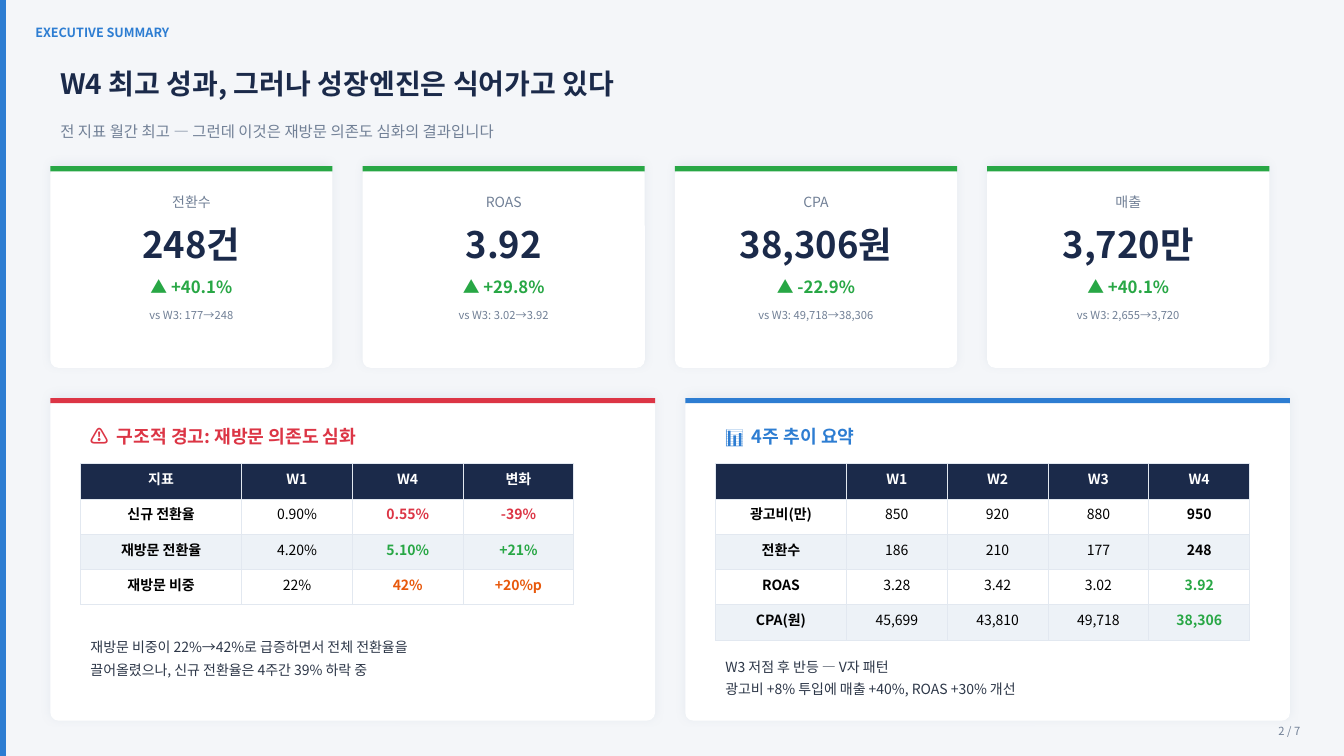
from lxml.etree import SubElement
from pptx import Presentation
from pptx.dml.color import RGBColor
from pptx.enum.shapes import MSO_SHAPE
from pptx.enum.text import MSO_ANCHOR, PP_ALIGN
from pptx.oxml.ns import qn
from pptx.util import Cm, Pt

FONT = "Noto Sans CJK KR"
NAVY, BLUE, GREEN, RED, ORANGE = "1B2A4A", "2D7DD2", "28A745", "DC3545", "E8590C"
GRAY, INK, BLACK, WHITE = "718096", "2D3748", "000000", "FFFFFF"
STRIPE, BORDER, SHADOW, BACKGROUND = "EDF2F7", "E2E8F0", "CBD5E0", "F4F6F9"


def color(hex_string):
    return RGBColor.from_string(hex_string)


def add_run(paragraph, text, size, hex_color, bold=False, spacing=None):
    run = paragraph.add_run()
    run.text = text
    run.font.name = FONT
    run.font.size = Pt(size)
    run.font.bold = bold
    run.font.color.rgb = color(hex_color)
    properties = run.font._element
    SubElement(properties, qn("a:ea"), typeface=FONT)
    if spacing:
        properties.set("spc", str(spacing))


def add_text(slide, box, lines, size, hex_color, bold=False,
             align=PP_ALIGN.LEFT, line_spacing=None, icon=None):
    frame = slide.shapes.add_textbox(*map(Cm, box)).text_frame
    frame.word_wrap = True
    frame.vertical_anchor = MSO_ANCHOR.MIDDLE
    for index, line in enumerate(lines):
        paragraph = frame.add_paragraph() if index else frame.paragraphs[0]
        paragraph.alignment = align
        if line_spacing:
            paragraph.line_spacing = line_spacing
        if icon:
            add_run(paragraph, icon + " ", size, hex_color, bold, spacing=150)
        add_run(paragraph, line, size, hex_color, bold)


def add_block(slide, kind, box, fill):
    shape = slide.shapes.add_shape(kind, *map(Cm, box))
    shape.fill.solid()
    shape.fill.fore_color.rgb = color(fill)
    shape.line.fill.background()
    shape.shadow.inherit = False
    return shape


def add_card(slide, box, accent, rounding):
    """White rounded card with a soft shadow and a coloured top bar."""
    left, top, width, height = box
    card = add_block(slide, MSO_SHAPE.ROUNDED_RECTANGLE, box, WHITE)
    card.adjustments[0] = rounding
    effects = card._element.spPr.find(qn("a:effectLst"))
    shadow = SubElement(effects, qn("a:outerShdw"), blurRad=str(Pt(6)),
                        dist=str(Pt(2)), dir="16200000", rotWithShape="0")
    shade = SubElement(shadow, qn("a:srgbClr"), val=SHADOW)
    SubElement(shade, qn("a:alpha"), val="35000")
    add_block(slide, MSO_SHAPE.RECTANGLE, (left, top, width, 0.13), accent)


def add_kpi(slide, box, label, value, change, comparison):
    left, top, width, height = box
    add_card(slide, box, GREEN, 0.04)
    # Offset from card top, height, text, size, colour, bold
    rows = [
        (0.51, 0.76, label, 10, GRAY, False),
        (1.27, 1.4, value, 26, NAVY, True),
        (2.67, 0.76, "▲ " + change, 12, GREEN, True),
        (3.43, 0.64, "vs W3: " + comparison, 8, GRAY, False),
    ]
    for offset, row_height, text, size, hex_color, bold in rows:
        add_text(slide, (left, top + offset, width, row_height), [text],
                 size, hex_color, bold, PP_ALIGN.CENTER)


def style_cell(cell, text, hex_color, bold, fill):
    if fill:
        cell.fill.solid()
        cell.fill.fore_color.rgb = color(fill)
    else:
        cell.fill.background()
    paragraph = cell.text_frame.paragraphs[0]
    paragraph.alignment = PP_ALIGN.CENTER
    if text:
        add_run(paragraph, text, 10, hex_color, bold)
    else:
        SubElement(paragraph._p, qn("a:endParaRPr"), sz="1000")
    # Borders come before the fill in the cell properties
    properties = cell._tc.get_or_add_tcPr()
    for index, side in enumerate(("lnL", "lnR", "lnT", "lnB")):
        line = SubElement(properties, qn("a:" + side), w=str(Pt(0.5)))
        solid = SubElement(line, qn("a:solidFill"))
        SubElement(solid, qn("a:srgbClr"), val=BORDER)
        properties.insert(index, line)


def add_data_table(slide, left, top, widths, rows, accents, accent_start):
    """Columns from accent_start on are bold, in the accent of their row."""
    table = slide.shapes.add_table(len(rows), len(widths), Cm(left), Cm(top),
                                   Cm(13.72), Cm(2.54)).table
    for column, width in zip(table.columns, widths):
        column.width = Cm(width)
    for row_index, row in enumerate(rows):
        table.rows[row_index].height = Cm(0.89)
        for column_index, text in enumerate(row):
            cell = table.cell(row_index, column_index)
            accented = column_index >= accent_start
            if row_index == 0:
                style_cell(cell, text, WHITE, True, NAVY)
            else:
                style_cell(cell, text,
                           accents[row_index - 1] if accented else BLACK,
                           accented or column_index == 0,
                           STRIPE if row_index % 2 == 0 else None)


def add_panel(slide, box, accent, icon, heading, table, note, note_box, spacing):
    left, top, width, height = box
    inner = left + 0.76
    add_card(slide, box, accent, 0.025)
    add_text(slide, (inner, top + 0.51, 13.97, 0.89), [heading], 13, accent,
             True, icon=icon)
    add_data_table(slide, inner, top + 1.65, *table)
    note_offset, note_height = note_box
    add_text(slide, (inner, top + note_offset, 13.72, note_height), note,
             10, INK, line_spacing=spacing)


def add_header(slide, box):
    left, top, width, height = box
    add_block(slide, MSO_SHAPE.RECTANGLE, (left, top, 0.15, height), BLUE)
    add_text(slide, (left + 0.64, top + 0.46, 7.62, 0.71),
             ["EXECUTIVE SUMMARY"], 9, BLUE, True)
    add_text(slide, (left + 1.27, top + 1.4, 31.24, 1.4),
             ["W4 최고 성과, 그러나 성장엔진은 식어가고 있다"], 20, NAVY, True)
    add_text(slide, (left + width - 3.9, top + height - 1.02, 3.05, 0.76),
             ["2 / 7"], 8, GRAY, align=PP_ALIGN.RIGHT)
    add_text(slide, (left + 1.27, top + 2.92, 30.48, 0.76),
             ["전 지표 월간 최고 — 그런데 이것은 재방문 의존도 심화의 결과입니다"], 11, GRAY)


def main():
    presentation = Presentation()
    presentation.slide_width, presentation.slide_height = Cm(33.87), Cm(19.05)
    slide = presentation.slides.add_slide(presentation.slide_layouts[6])
    slide.background.fill.solid()
    slide.background.fill.fore_color.rgb = color(BACKGROUND)
    add_header(slide, (0, 0, 33.87, 19.05))

    # Key figures
    kpis = [
        ("전환수", "248건", "+40.1%", "177→248"),
        ("ROAS", "3.92", "+29.8%", "3.02→3.92"),
        ("CPA", "38,306원", "-22.9%", "49,718→38,306"),
        ("매출", "3,720만", "+40.1%", "2,655→3,720"),
    ]
    for index, kpi in enumerate(kpis):
        add_kpi(slide, (1.27 + index * 7.87, 4.19, 7.11, 5.08), *kpi)

    # Warning panel
    warning_rows = [
        ("지표", "W1", "W4", "변화"),
        ("신규 전환율", "0.90%", "0.55%", "-39%"),
        ("재방문 전환율", "4.20%", "5.10%", "+21%"),
        ("재방문 비중", "22%", "42%", "+20%p"),
    ]
    add_panel(slide, (1.27, 10.03, 15.24, 8.13), RED, "⚠",
              "구조적 경고: 재방문 의존도 심화",
              ([4.06] + [2.79] * 3, warning_rows, [RED, GREEN, ORANGE], 2),
              ["재방문 비중이 22%→42%로 급증하면서 전체 전환율을",
               "끌어올렸으나, 신규 전환율은 4주간 39% 하락 중"], (5.46, 2.03), 1.4)

    # Four-week trend panel
    trend_rows = [
        ("", "W1", "W2", "W3", "W4"),
        ("광고비(만)", "850", "920", "880", "950"),
        ("전환수", "186", "210", "177", "248"),
        ("ROAS", "3.28", "3.42", "3.02", "3.92"),
        ("CPA(원)", "45,699", "43,810", "49,718", "38,306"),
    ]
    add_panel(slide, (17.27, 10.03, 15.24, 8.13), BLUE, "📊", "4주 추이 요약",
              ([3.3] + [2.54] * 4, trend_rows, [BLACK, BLACK, GREEN, GREEN], 4),
              ["W3 저점 후 반등 — V자 패턴",
               "광고비 +8% 투입에 매출 +40%, ROAS +30% 개선"], (6.35, 1.27), 1.3)

    presentation.save("out.pptx")


if __name__ == "__main__":
    main()
